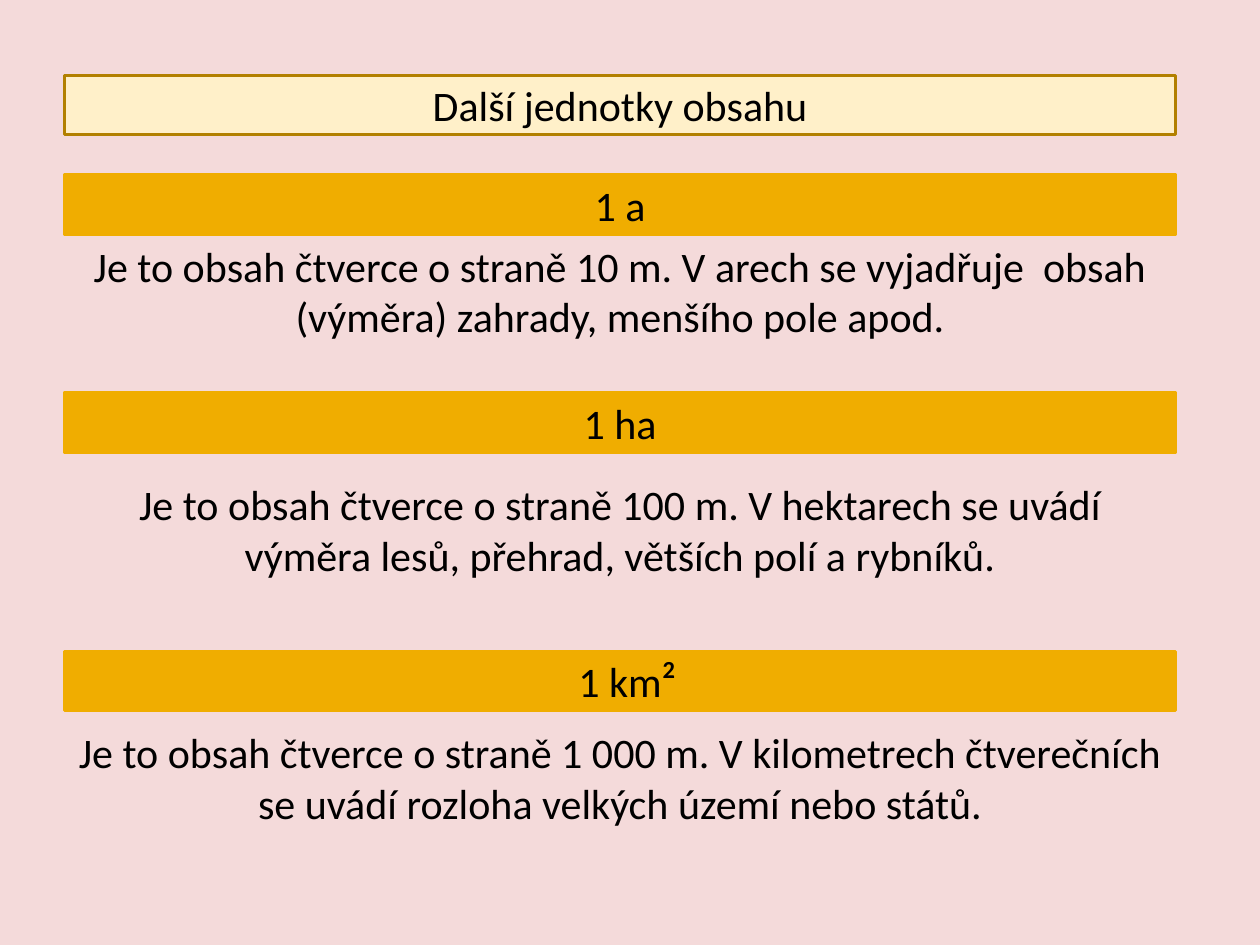
from pptx import Presentation
from pptx.dml.color import RGBColor
from pptx.enum import shapes, text
from pptx.util import Cm, Pt

PINK = RGBColor(0xF4, 0xDA, 0xDA)
CREAM = RGBColor(0xFF, 0xF0, 0xC9)
BROWN = RGBColor(0xB2, 0x80, 0x00)
AMBER = RGBColor(0xF0, 0xAD, 0x00)
BLACK = RGBColor(0, 0, 0)

LEFT, WIDTH = Cm(1.3), Cm(22.4)
BAR_HEIGHT, NOTE_HEIGHT = Cm(1.19), Cm(2.31)

UNITS = [
    ("1 a", 3.53, 4.72,
     "Je to obsah čtverce o straně 10 m. V arech se vyjadřuje  obsah (výměra) zahrady, menšího pole apod."),
    ("1 ha", 7.92, 9.53,
     "Je to obsah čtverce o straně 100 m. V hektarech se uvádí výměra lesů, přehrad, větších polí a rybníků."),
    ("1 km", 13.13, 14.53,
     "Je to obsah čtverce o straně 1 000 m. V kilometrech čtverečních se uvádí rozloha velkých území nebo států."),
]


def write(shape, words, anchor, align=text.PP_ALIGN.CENTER, **font):
    """Put one formatted paragraph into a shape."""
    frame = shape.text_frame
    frame.word_wrap = True
    frame.auto_size = text.MSO_AUTO_SIZE.NONE
    frame.vertical_anchor = anchor
    para = frame.paragraphs[0]
    para.alignment = align
    span = para.add_run()
    span.text = words
    span.font.color.rgb = BLACK
    for name, value in {"name": "Calibri", "size": Pt(24), "bold": False, **font}.items():
        setattr(span.font, name, value)


def style_bar(bar, words, fill, line):
    """Colour a bar and centre its heading."""
    bar.fill.solid()
    bar.fill.fore_color.rgb = fill
    bar.line.color.rgb = line
    bar.line.width = Pt(2)
    write(bar, words, text.MSO_ANCHOR.MIDDLE)


def set_title(page, words, top):
    """Move the title placeholder and make it a framed bar."""
    title = page.shapes.title
    for name, value in {"left": LEFT, "top": top, "width": WIDTH, "height": BAR_HEIGHT}.items():
        setattr(title, name, value)
    style_bar(title, words, CREAM, BROWN)


def add_bar(page, words, top):
    """Add an amber bar that names a unit."""
    bar = page.shapes.add_shape(shapes.MSO_SHAPE.RECTANGLE, LEFT, top, WIDTH, BAR_HEIGHT)
    bar.shadow.inherit = False
    style_bar(bar, words, AMBER, AMBER)


def add_note(page, words, left, top, width, height, **formats):
    """Add a text box aligned to its top."""
    box = page.shapes.add_textbox(left, top, width, height)
    write(box, words, text.MSO_ANCHOR.TOP, **formats)


def main():
    """Build the slide on units of area."""
    deck = Presentation()
    deck.slide_width, deck.slide_height = Cm(25.4), Cm(19.05)
    page = deck.slides.add_slide(deck.slide_layouts.get_by_name("Title Only"))
    page.background.fill.solid()
    page.background.fill.fore_color.rgb = PINK

    set_title(page, "Další jednotky obsahu", Cm(1.52))
    for unit, bar_top, note_top, note in UNITS:
        add_bar(page, unit, Cm(bar_top))
        add_note(page, note, LEFT, Cm(note_top), WIDTH, NOTE_HEIGHT)
    add_note(page, "2", Cm(13.11), Cm(13.06), Cm(0.79), Cm(0.86),
             align=text.PP_ALIGN.LEFT, size=Pt(14), bold=True)
    deck.save("out.pptx")


if __name__ == "__main__":
    main()
